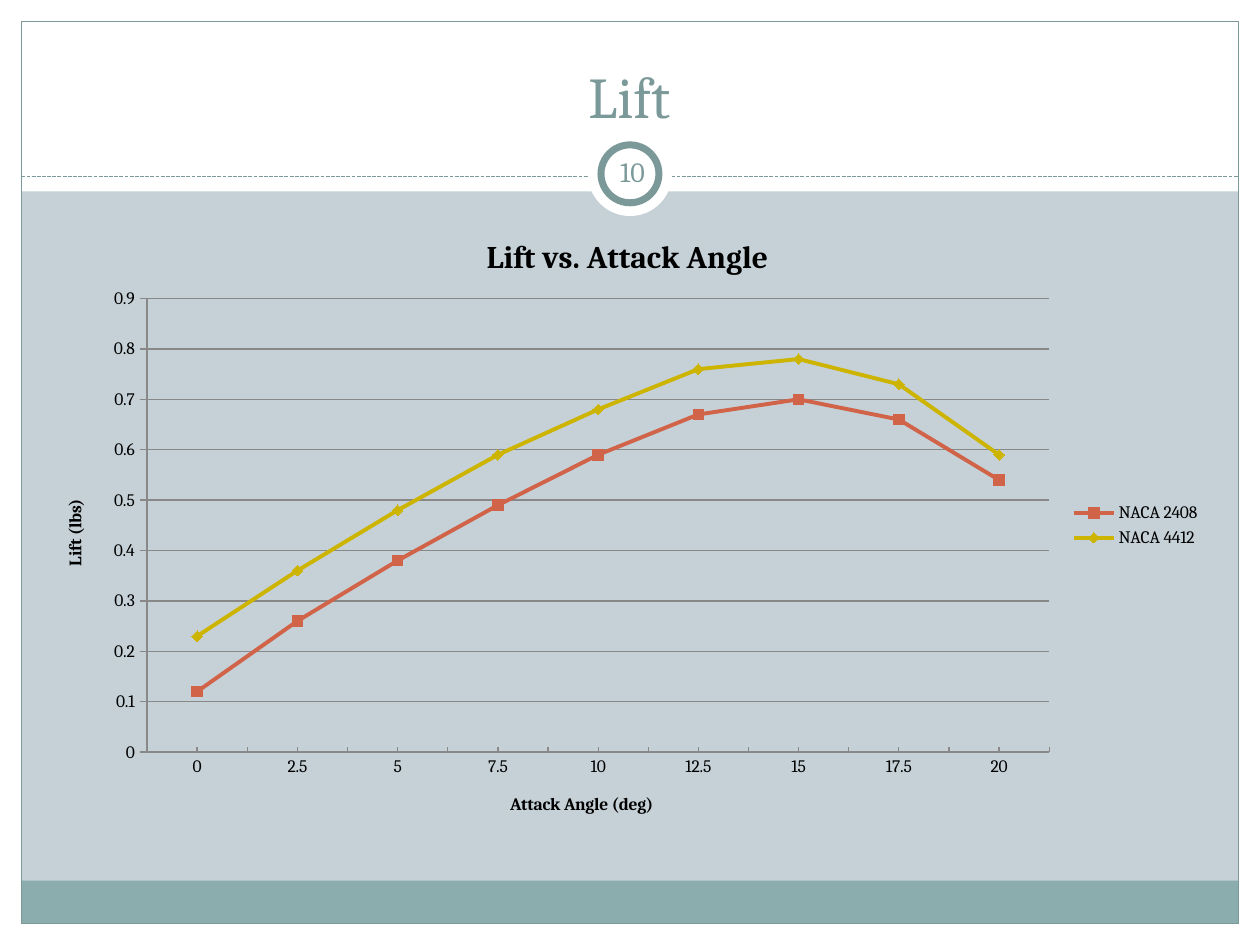
import pptx
import pptx.chart.data
import pptx.dml.color
import pptx.enum.chart
import pptx.enum.dml
import pptx.enum.shapes
import pptx.enum.text
import pptx.oxml
import pptx.oxml.ns
import pptx.util

# Content
TITLE = "Lift"
SLIDE_NUMBER = "10"
CHART_TITLE = "Lift vs. Attack Angle"
ANGLE_TITLE = "Attack Angle (deg)"
LIFT_TITLE = "Lift (lbs)"
ANGLES = ["0", "2.5", "5", "7.5", "10", "12.5", "15", "17.5", "20"]
MARKER = pptx.enum.chart.XL_MARKER_STYLE
SERIES = [
    ("NACA 2408", "red", MARKER.SQUARE, [0.12, 0.26, 0.38, 0.49, 0.59, 0.67, 0.7, 0.66, 0.54]),
    ("NACA 4412", "gold", MARKER.DIAMOND, [0.23, 0.36, 0.48, 0.59, 0.68, 0.76, 0.78, 0.73, 0.59]),
]
COLORS = {"background": "C5D1D7", "white": "FFFFFF", "teal": "7C999A", "footer": "8CADAE",
          "grid": "888888", "black": "000000", "red": "D16349", "gold": "CCB400"}
FONT = "Cambria"

# Slide measures, in inches
WIDTH, HEIGHT = 10, 7.5
MARGIN = 0.17
HEADER = 1.52
FOOTER = 0.34
RULE_Y = 1.4
BADGE_Y = 1.38
PLOT = {"x": 0.09, "y": 0.14, "w": 0.77, "h": 0.72}  # shares of the chart

SHAPE = pptx.enum.shapes.MSO_SHAPE
ANCHOR = pptx.enum.text.MSO_ANCHOR
Pt = pptx.util.Pt


def color(name):
    return pptx.dml.color.RGBColor.from_string(COLORS[name])


def inches(*lengths):
    return [pptx.util.Inches(length) for length in lengths]


def add_panel(slide, box, fill=None, line=None, line_width=0.75, kind=SHAPE.RECTANGLE):
    shape = slide.shapes.add_shape(kind, *inches(*box))
    shape.shadow.inherit = False
    if fill:
        shape.fill.solid()
        shape.fill.fore_color.rgb = color(fill)
    else:
        shape.fill.background()
    if line:
        shape.line.color.rgb = color(line)
        shape.line.width = Pt(line_width)
    else:
        shape.line.fill.background()


def add_circle(slide, diameter, **style):
    box = (WIDTH / 2 - diameter / 2, BADGE_Y - diameter / 2, diameter, diameter)
    add_panel(slide, box, fill="white", kind=SHAPE.OVAL, **style)


def format_font(font, size, name="black", bold=False):
    font.name = FONT
    font.size = Pt(size)
    font.bold = bold
    font.color.rgb = color(name)


def write_text(shape, box, text, size, anchor):
    shape.left, shape.top, shape.width, shape.height = inches(*box)
    frame = shape.text_frame
    frame.text = text
    frame.word_wrap = True
    frame.vertical_anchor = anchor
    frame.margin_left = frame.margin_right = frame.margin_top = frame.margin_bottom = inches(0.05)[0]
    paragraph = frame.paragraphs[0]
    paragraph.alignment = pptx.enum.text.PP_ALIGN.CENTER
    format_font(paragraph.runs[0].font, size, "teal")


def write_chart_title(owner, title, text, size):
    title.text_frame.text = text
    format_font(title.text_frame.paragraphs[0].runs[0].font, size, bold=True)


def add_frame(slide):
    # White margins and header
    for box in [(0, HEIGHT - MARGIN, WIDTH, MARGIN), (0, 0, WIDTH, HEADER),
                (0, 0, MARGIN, HEIGHT), (WIDTH - MARGIN, 0, MARGIN, HEIGHT)]:
        add_panel(slide, box, fill="white")
    # Footer band and border
    inner_width = WIDTH - 2 * MARGIN
    add_panel(slide, (MARGIN, HEIGHT - MARGIN - FOOTER, inner_width, FOOTER), fill="footer")
    add_panel(slide, (MARGIN, MARGIN, inner_width, HEIGHT - 2 * MARGIN), line="teal")
    # Dashed rule
    rule = slide.shapes.add_connector(pptx.enum.shapes.MSO_CONNECTOR.STRAIGHT,
                                      *inches(MARGIN, RULE_Y, WIDTH - MARGIN, RULE_Y))
    rule.line.color.rgb = color("teal")
    rule.line.width = Pt(0.75)
    rule.line.dash_style = pptx.enum.dml.MSO_LINE.SQUARE_DOT
    rule._element.spPr.append(pptx.oxml.parse_xml(
        "<a:effectLst %s/>" % pptx.oxml.ns.nsdecls("a")))
    # Number badge
    add_circle(slide, 0.67)
    add_circle(slide, 0.46, line="teal", line_width=4)


def place_plot(chart):
    plot_area = chart._chartSpace.chart.plotArea
    for layout in plot_area.findall(pptx.oxml.ns.qn("c:layout")):
        plot_area.remove(layout)
    modes = '<c:xMode val="edge"/><c:yMode val="edge"/>'
    shares = "".join('<c:%s val="%s"/>' % pair for pair in PLOT.items())
    plot_area.insert(0, pptx.oxml.parse_xml(
        '<c:layout %s><c:manualLayout><c:layoutTarget val="inner"/>%s%s</c:manualLayout></c:layout>'
        % (pptx.oxml.ns.nsdecls("c"), modes, shares)))


def add_lift_chart(slide):
    data = pptx.chart.data.CategoryChartData()
    data.categories = ANGLES
    for name, _, _, values in SERIES:
        data.add_series(name, values)
    chart = slide.shapes.add_chart(pptx.enum.chart.XL_CHART_TYPE.LINE_MARKERS,
                                   *inches(0.33, 1.67, 9.3, 5), data).chart
    format_font(chart.font, 10)
    chart.has_title = True
    write_chart_title(chart, chart.chart_title, CHART_TITLE, 18)
    chart.has_legend = True
    chart.legend.position = pptx.enum.chart.XL_LEGEND_POSITION.RIGHT
    chart.legend.include_in_layout = False
    chart.plots[0].vary_by_categories = False

    # Axes
    tick = pptx.enum.chart.XL_TICK_MARK
    angle_axis, lift_axis = chart.category_axis, chart.value_axis
    for axis, text in [(angle_axis, ANGLE_TITLE), (lift_axis, LIFT_TITLE)]:
        write_chart_title(axis, axis.axis_title, text, 10)
        axis.format.line.color.rgb = color("grid")
    angle_axis.major_tick_mark = tick.NONE
    angle_axis.minor_tick_mark = tick.INSIDE
    lift_axis.major_tick_mark = tick.CROSS
    lift_axis.minimum_scale, lift_axis.maximum_scale, lift_axis.major_unit = 0, 0.9, 0.1
    lift_axis.has_major_gridlines = True
    lift_axis.major_gridlines.format.line.color.rgb = color("grid")
    lift_axis.tick_labels.number_format = "General"
    lift_axis.tick_labels.number_format_is_linked = False

    # Series
    for series, (_, name, marker, _) in zip(chart.plots[0].series, SERIES):
        series.smooth = False
        series.format.line.color.rgb = color(name)
        series.format.line.width = Pt(2.25)
        series.marker.style = marker
        series.marker.size = 6
        series.marker.format.fill.solid()
        series.marker.format.fill.fore_color.rgb = color(name)
        series.marker.format.line.color.rgb = color(name)
    place_plot(chart)


def main():
    presentation = pptx.Presentation()
    presentation.slide_width, presentation.slide_height = inches(WIDTH, HEIGHT)
    slide = presentation.slides.add_slide(presentation.slide_layouts[5])
    slide.background.fill.solid()
    slide.background.fill.fore_color.rgb = color("background")
    add_frame(slide)

    # Title in front of the header
    title = slide.shapes.title
    slide.shapes._spTree.append(title._element)
    write_text(title, (0.33, 0.25, 9.33, 0.83), TITLE, 33, ANCHOR.BOTTOM)
    number_box = (4.77, 1.12, 0.5, 0.48)
    number = slide.shapes.add_textbox(*inches(*number_box))
    write_text(number, number_box, SLIDE_NUMBER, 16, ANCHOR.MIDDLE)
    add_lift_chart(slide)
    presentation.save("out.pptx")


if __name__ == "__main__":
    main()
